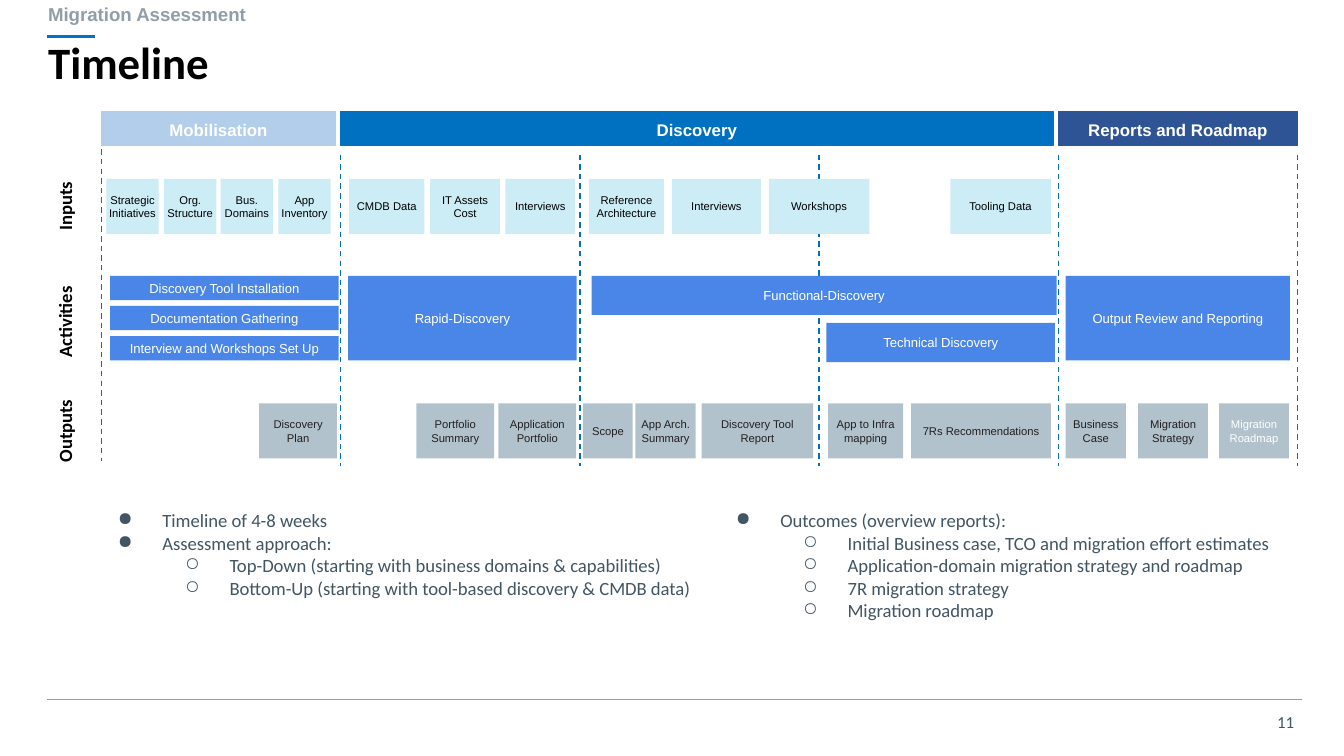
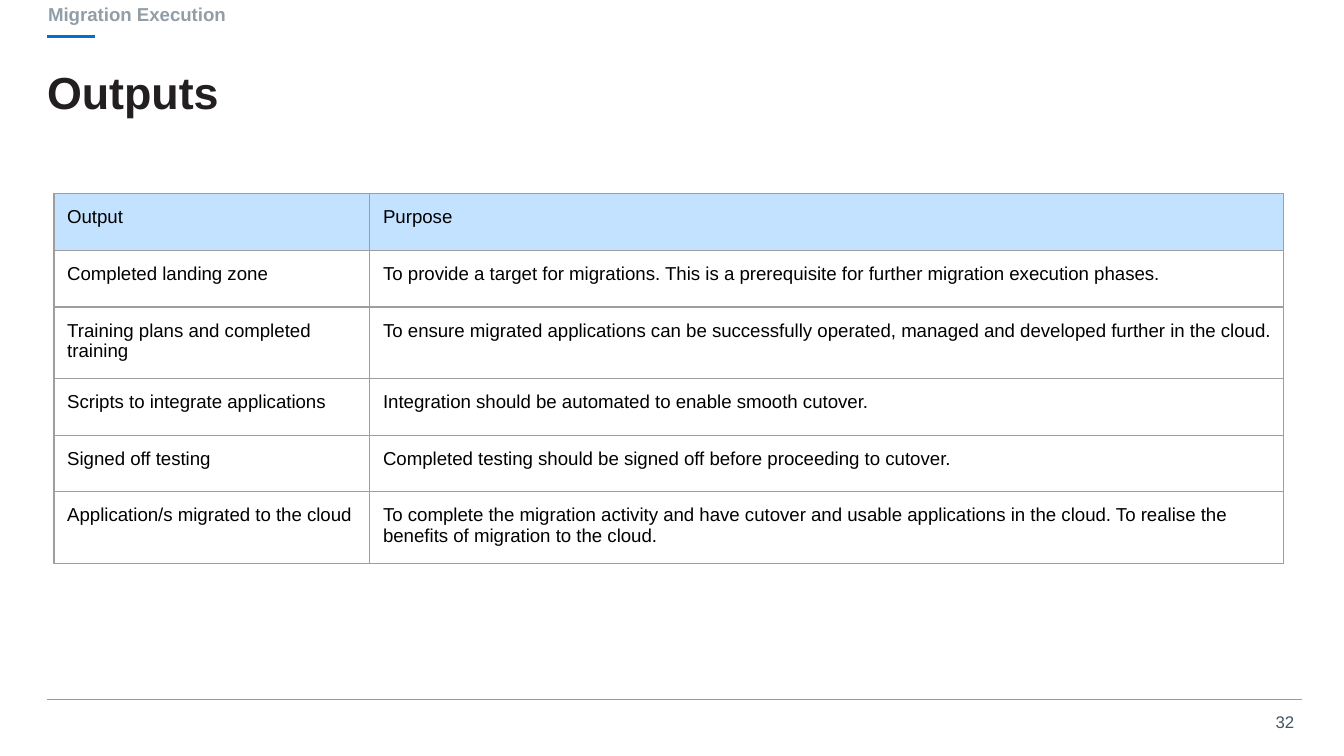
import pptx
import pptx.dml.color
import pptx.enum.dml
import pptx.enum.shapes
import pptx.enum.text
import pptx.oxml
import pptx.oxml.ns
import pptx.util
from lxml import etree

Cm = pptx.util.Cm
Pt = pptx.util.Pt
ALIGN = pptx.enum.text.PP_ALIGN
ANCHOR = pptx.enum.text.MSO_ANCHOR

COLOURS = {
    "accent": "0072CE", "rule": "919EA8", "slate": "425563", "ink": "231F20",
    "black": "000000", "white": "FFFFFF", "guide": "0070C0",
    "mobilisation": "B2CEEB", "discovery": "0070C0", "roadmap": "2F5496",
    "input": "CDEDF6", "activity": "4A86E8", "output": "053B5C",
    "header": "C2E2FF", "border": "9E9E9E",
}


def rgb(name):
    return pptx.dml.color.RGBColor.from_string(COLOURS[name])


def add_xml(parent, tag, **attributes):
    return etree.SubElement(parent, pptx.oxml.ns.qn(tag), attributes)


class SlideBuilder:
    """Holds the deck, its style and the current page; lengths are in cm."""

    def __init__(self):
        self.deck = pptx.Presentation()
        self.deck.slide_width = Cm(25.4)
        self.deck.slide_height = Cm(14.28)
        self.page = None

    def new_page(self, section, number, number_font):
        self.page = self.deck.slides.add_slide(self.deck.slide_layouts[6])
        self.line(0.89, 0.69, 1.8, 0.69, "accent", 2)
        self.line(0.89, 13.21, 24.61, 13.21, "rule")
        self.text(23.85, 13.34, 0.79, 0.58, number, 9, "slate", number_font,
                  align=ALIGN.RIGHT, insets=(0.18, 0.1))
        self.text(0.66, -0.15, 8.51, 0.94, section, 10, "rule", bold=True)

    def format_text(self, frame, size, colour, font="Arial", bold=False,
                    align=ALIGN.LEFT, spacing=None):
        for para in frame.paragraphs:
            para.alignment = align
            if spacing:
                para.line_spacing = spacing
            for span in para.runs:
                span.font.size = Pt(size)
                span.font.name = font
                span.font.bold = bold
                span.font.color.rgb = rgb(colour)

    def fill_frame(self, frame, words, insets, anchor):
        frame.word_wrap = True
        frame.margin_left = frame.margin_right = Cm(insets[0])
        frame.margin_top = frame.margin_bottom = Cm(insets[1])
        frame.vertical_anchor = anchor
        frame.text = words

    def text(self, left, top, width, height, words, size, colour, font="Arial",
             insets=(0.25, 0.25), anchor=ANCHOR.TOP, **style):
        box = self.page.shapes.add_textbox(Cm(left), Cm(top), Cm(width), Cm(height))
        self.fill_frame(box.text_frame, words, insets, anchor)
        self.format_text(box.text_frame, size, colour, font, **style)
        return box

    def title(self, left, top, words, colour, font, anchor, spacing=None):
        self.text(left, top, 23.75, 1.8, words, 24, colour, font,
                  insets=(0, 0), anchor=anchor, bold=True, spacing=spacing)

    def line(self, x1, y1, x2, y2, colour, weight=0.75, dashed=False):
        connector = self.page.shapes.add_connector(
            pptx.enum.shapes.MSO_CONNECTOR.STRAIGHT, Cm(x1), Cm(y1), Cm(x2), Cm(y2))
        connector.line.color.rgb = rgb(colour)
        connector.line.width = Pt(weight)
        if dashed:
            connector.line.dash_style = pptx.enum.dml.MSO_LINE.DASH
        add_xml(connector._element.spPr, "a:effectLst")

    def block(self, left, top, width, height, words, fill, size, colour,
              insets=(0.25, 0.25), outlined=False, opacity=None, **style):
        shape = self.page.shapes.add_shape(
            pptx.enum.shapes.MSO_SHAPE.RECTANGLE, Cm(left), Cm(top), Cm(width), Cm(height))
        shape.shadow.inherit = False
        shape.fill.solid()
        shape.fill.fore_color.rgb = rgb(fill)
        if opacity:
            tint = shape._element.spPr.find(".//" + pptx.oxml.ns.qn("a:srgbClr"))
            add_xml(tint, "a:alpha", val=str(opacity * 1000))
        if outlined:
            shape.line.color.rgb = rgb(fill)
            shape.line.width = Pt(0.75)
        else:
            shape.line.fill.background()
        self.fill_frame(shape.text_frame, words, insets, ANCHOR.MIDDLE)
        self.format_text(shape.text_frame, size, colour, align=ALIGN.CENTER, **style)

    def bullets(self, left, top, width, height, items):
        words = "\n".join(item for _, item in items)
        box = self.text(left, top, width, height, words, 10, "slate", "Calibri")
        for para, (level, _) in zip(box.text_frame.paragraphs, items):
            para.level = level
            properties = para._p.get_or_add_pPr()
            properties.set("marL", str(Cm(1.27 * (level + 1))))
            properties.set("indent", str(Cm(-0.84)))
            add_xml(add_xml(properties, "a:buClr"), "a:srgbClr", val=COLOURS["slate"])
            add_xml(properties, "a:buChar", char="●○"[level])

    def table(self, left, top, widths, row_height, rows):
        table = self.page.shapes.add_table(
            len(rows), len(widths), Cm(left), Cm(top), Cm(sum(widths)),
            Cm(row_height * len(rows))).table
        table.first_row = table.horz_banding = False
        for column, width in zip(table.columns, widths):
            column.width = Cm(width)
        for r, row in enumerate(rows):
            for c, words in enumerate(row):
                self.cell(table.cell(r, c), words, "header" if r == 0 else None)

    def cell(self, cell, words, fill):
        cell.text = words
        cell.margin_left = cell.margin_right = Cm(0.25)
        cell.margin_top = cell.margin_bottom = Cm(0.25)
        self.format_text(cell.text_frame, 10, "black")
        properties = cell._tc.get_or_add_tcPr()
        for side in "LRTB":
            border = add_xml(properties, "a:ln" + side, w=str(Pt(0.75)))
            add_xml(add_xml(border, "a:solidFill"), "a:srgbClr", val=COLOURS["border"])
        if fill:
            cell.fill.solid()
            cell.fill.fore_color.rgb = rgb(fill)
        else:
            cell.fill.background()


# Timeline content: horizontal places and widths in cm
GRID_LEFT, GRID_STEP = 1.92, 4.52

STAGES = [  # label, first column, width, colour
    ("Mobilisation", 0, 4.42, "mobilisation"),
    ("Discovery", 1, 13.46, "discovery"),
    ("Reports and Roadmap", 4, 4.52, "roadmap"),
]
ROW_LABELS = [  # label, top, width
    ("Inputs", 3.43, 1.83), ("Activities", 5.61, 2.36), ("Outputs", 7.67, 2.06),
]
INPUTS = [  # label, left, width
    ("Strategic Initiatives", 2.01, 0.99), ("Org. Structure", 3.1, 0.99),
    ("Bus. Domains", 4.17, 0.99), ("App Inventory", 5.26, 0.99),
    ("CMDB Data", 6.6, 1.42), ("IT Assets Cost", 8.13, 1.32),
    ("Interviews", 9.55, 1.32), ("Reference Architecture", 11.13, 1.42),
    ("Interviews", 12.7, 1.68), ("Workshops", 14.53, 1.9),
    ("Tooling Data", 17.96, 1.9),
]
SETUP_TASKS = ["Discovery Tool Installation", "Documentation Gathering",
               "Interview and Workshops Set Up"]
ACTIVITIES = [  # label, left, top, width, height
    ("Rapid-Discovery", 6.58, 5.21, 4.32, 1.6),
    ("Functional-Discovery", 11.18, 5.21, 8.79, 0.74),
    ("Technical Discovery", 15.62, 6.1, 4.32, 0.74),
    ("Output Review and Reporting", 20.14, 5.21, 4.24, 1.6),
]
OUTPUTS = [  # label, left, width
    ("Discovery Plan", 4.9, 1.47), ("Portfolio Summary", 7.87, 1.47),
    ("Application Portfolio", 9.42, 1.47), ("Scope", 11.02, 0.94),
    ("App Arch. Summary", 12.01, 1.14), ("Discovery Tool Report", 13.26, 2.11),
    ("App to Infra mapping", 15.65, 1.42), ("7Rs Recommendations", 17.22, 2.64),
    ("Business Case", 20.14, 1.14), ("Migration Strategy", 21.51, 1.32),
    ("Migration Roadmap", 23.04, 1.32),
]
APPROACH = [
    (0, "Timeline of 4-8 weeks"),
    (0, "Assessment approach:"),
    (1, "Top-Down (starting with business domains & capabilities)"),
    (1, "Bottom-Up (starting with tool-based discovery & CMDB data)"),
]
OUTCOMES = [
    (0, "Outcomes (overview reports):"),
    (1, "Initial Business case, TCO and migration effort estimates"),
    (1, "Application-domain migration strategy and roadmap"),
    (1, "7R migration strategy"),
    (1, "Migration roadmap"),
]
OUTPUT_ROWS = [
    ("Output", "Purpose"),
    ("Completed landing zone",
     "To provide a target for migrations. This is a prerequisite for further "
     "migration execution phases."),
    ("Training plans and completed training",
     "To ensure migrated applications can be successfully operated, managed and "
     "developed further in the cloud."),
    ("Scripts to integrate applications",
     "Integration should be automated to enable smooth cutover."),
    ("Signed off testing",
     "Completed testing should be signed off before proceeding to cutover."),
    ("Application/s migrated to the cloud",
     "To complete the migration activity and have cutover and usable applications "
     "in the cloud. To realise the benefits of migration to the cloud."),
]


def build_timeline(slides):
    slides.new_page("Migration Assessment", "11", "Calibri")
    slides.title(0.91, 0.66, "Timeline", "black", "Calibri", ANCHOR.TOP)

    # Column guides and stage headers
    for column in range(6):
        x = GRID_LEFT + column * GRID_STEP
        top = 2.92 if column else 2.82
        slides.line(x, top, x, top + 5.89, "guide", dashed=True)
    for label, column, width, colour in STAGES:
        slides.block(GRID_LEFT + column * GRID_STEP, 2.11, width, 0.64, label, colour,
                     9, "white", outlined=True, bold=True, spacing=1.15)

    # Row labels, turned to read upwards
    for label, top, width in ROW_LABELS:
        box = slides.text(1.27 - width / 2, top, width, 0.94, label, 10, "black",
                          "Calibri", bold=True, align=ALIGN.CENTER)
        box.rotation = 270

    # Inputs, activities and outputs
    for label, left, width in INPUTS:
        slides.block(left, 3.38, width, 1.04, label, "input", 6, "black", insets=(0, 0.1))
    for index, label in enumerate(SETUP_TASKS):
        slides.block(2.08, 5.21 + 0.57 * index, 4.32, 0.46, label, "activity", 7, "white")
    for label, left, top, width, height in ACTIVITIES:
        slides.block(left, top, width, height, label, "activity", 7, "white")
    for label, left, width in OUTPUTS:
        colour = "white" if label == "Migration Roadmap" else "ink"
        slides.block(left, 7.62, width, 1.04, label, "output", 6, colour,
                     insets=(0.05, 0.25), opacity=31)

    # Summary lists
    slides.bullets(1.55, 9.37, 12.29, 2.57, APPROACH)
    slides.bullets(13.23, 9.37, 12.17, 3.07, OUTCOMES)


def build_outputs(slides):
    slides.new_page("Migration Execution", "32", "Arial")
    slides.title(0.89, 0.89, "Outputs", "ink", "Arial", ANCHOR.MIDDLE, spacing=0.9)
    slides.table(1.02, 3.66, (5.97, 17.27), 1.07, OUTPUT_ROWS)


def main():
    slides = SlideBuilder()
    build_timeline(slides)
    build_outputs(slides)
    slides.deck.save("out.pptx")


if __name__ == "__main__":
    main()
